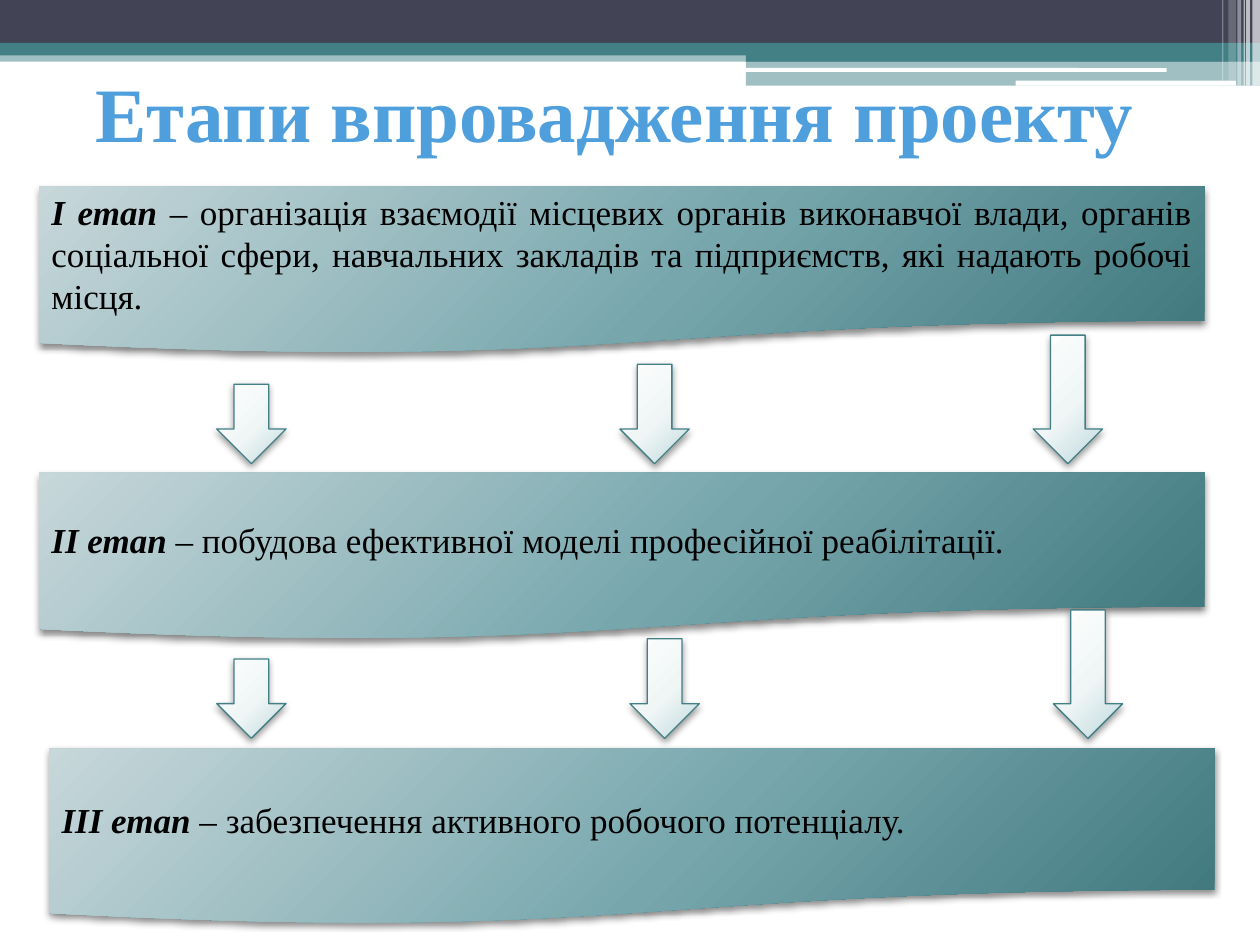
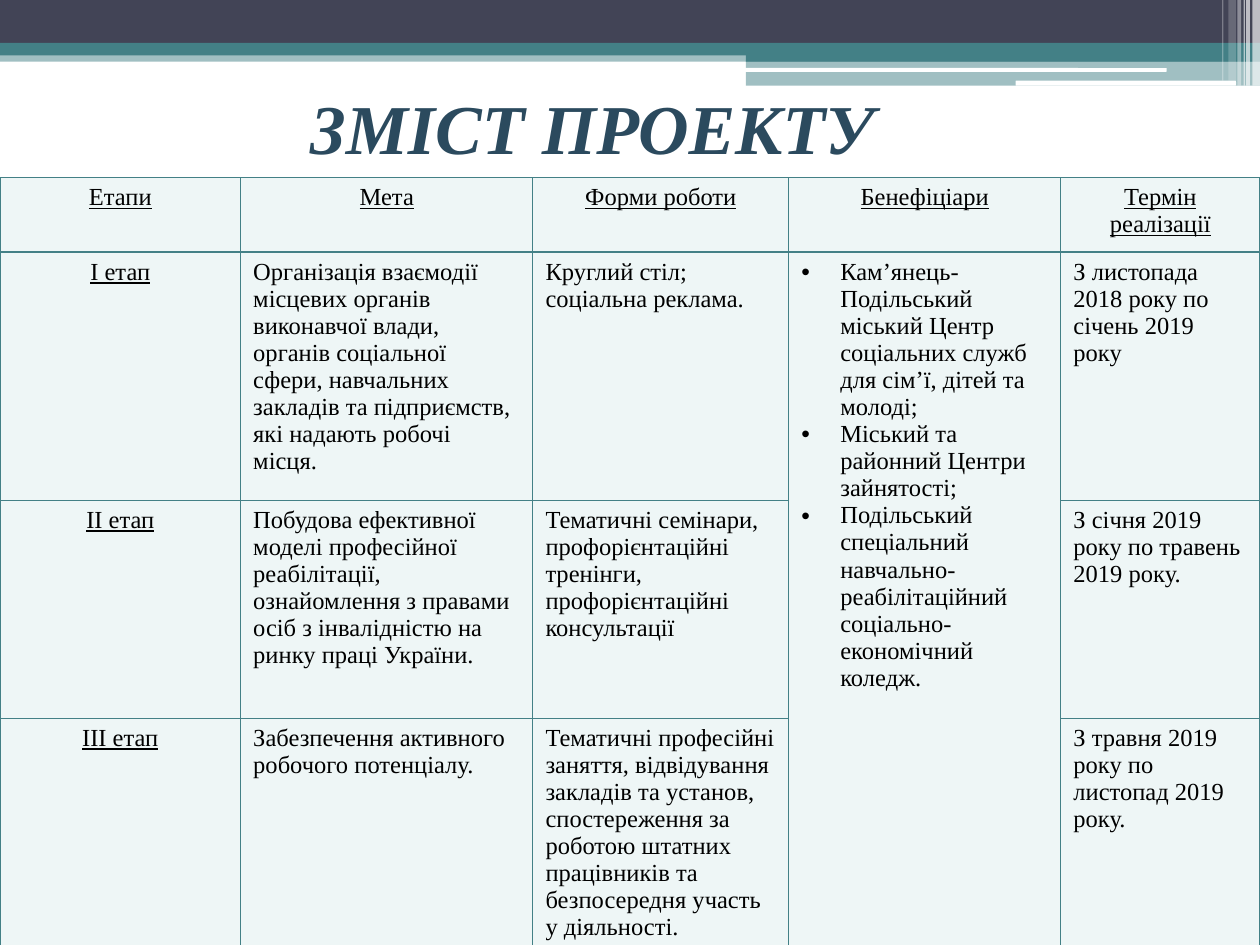
from dataclasses import dataclass

from lxml import etree
from pptx import Presentation
from pptx.dml.color import RGBColor
from pptx.enum.shapes import MSO_SHAPE
from pptx.enum.text import MSO_ANCHOR, MSO_AUTO_SIZE, PP_ALIGN
from pptx.oxml import parse_xml
from pptx.oxml.ns import qn
from pptx.util import Inches, Pt

RECT = MSO_SHAPE.RECTANGLE
ROUND = MSO_SHAPE.ROUNDED_RECTANGLE
PAGE = MSO_SHAPE.FLOWCHART_DOCUMENT
DOWN = MSO_SHAPE.DOWN_ARROW
CENTER, LEFT, JUSTIFY = PP_ALIGN.CENTER, PP_ALIGN.LEFT, PP_ALIGN.JUSTIFY
TOP, MIDDLE = MSO_ANCHOR.TOP, MSO_ANCHOR.MIDDLE
GROW = MSO_AUTO_SIZE.SHAPE_TO_FIT_TEXT

FONT = "Times New Roman"
BLACK = RGBColor(0x00, 0x00, 0x00)
WHITE = RGBColor(0xFF, 0xFF, 0xFF)
DARK = RGBColor(0x42, 0x44, 0x56)
TEAL = RGBColor(0x43, 0x80, 0x86)
NAVY = RGBColor(0x2B, 0x4A, 0x5E)
PALE = RGBColor(0xEE, 0xF6, 0xF6)

Stops = tuple[tuple[int, RGBColor], ...]
SEA: Stops = ((0, RGBColor(0xC7, 0xD7, 0xDA)), (55, RGBColor(0x77, 0xA7, 0xAD)),
              (100, RGBColor(0x3E, 0x77, 0x7D)))
MIST: Stops = ((0, RGBColor(0xFE, 0xFE, 0xFE)), (55, RGBColor(0xF0, 0xF6, 0xF6)),
               (100, RGBColor(0xBF, 0xD9, 0xDD)))
SKY: Stops = ((0, RGBColor(0x18, 0x4D, 0x70)), (78, RGBColor(0x4E, 0x9F, 0xDB)),
              (100, RGBColor(0xEF, 0xF5, 0xFB)))
GLOW = ('<a:path path="circle"><a:fillToRect l="-40000" t="-90000" '
        'r="140000" b="190000"/></a:path>')
FALL = '<a:lin ang="5400000" scaled="0"/>'
NS = 'xmlns:a="http://schemas.openxmlformats.org/drawingml/2006/main"'


@dataclass
class Box:
    left: float
    top: float
    width: float
    height: float

    def place(self) -> tuple:
        return tuple(Inches(n) for n in (self.left, self.top, self.width, self.height))


@dataclass
class Band:
    box: Box
    color: RGBColor
    alpha: int = 100
    kind: int = RECT


@dataclass
class Step:
    box: Box
    label: str
    text: str


BANDS = [
    Band(Box(0, 0.4, 10, 0.09), TEAL, 50),
    Band(Box(0, 0, 10, 0.34), DARK),
    Band(Box(0, 0.34, 10, 0.1), TEAL),
    Band(Box(5.92, 0.39, 4.08, 0.1), TEAL),
    Band(Box(5.92, 0.48, 4.08, 0.2), TEAL, 50),
    Band(Box(5.91, 0.54, 3.35, 0.03), WHITE, kind=ROUND),
    Band(Box(8.06, 0.64, 1.75, 0.04), WHITE, kind=ROUND),
] + [
    Band(Box(left, 0, width, height), WHITE, alpha)
    for left, width, height, alpha in (
        (9.94, 0.06, 0.68, 65), (9.89, 0.03, 0.68, 65), (9.87, 0.01, 0.68, 60),
        (9.82, 0.03, 0.68, 40), (9.75, 0.06, 0.64, 20), (9.7, 0.01, 0.64, 30))
]

STEPS = [
    Step(Box(0.31, 1.48, 9.25, 1.33), "І етап ",
         "організація взаємодії місцевих органів виконавчої влади, органів соціальної "
         "сфери, навчальних закладів та підприємств, які надають робочі місця."),
    Step(Box(0.31, 3.75, 9.25, 1.33), "ІI етап ",
         "побудова ефективної моделі професійної реабілітації."),
    Step(Box(0.39, 5.94, 9.25, 1.4), "ІІI етап ",
         "забезпечення активного робочого потенціалу."),
]
TIPS = {3.68: (1.72, 4.92, 8.2), 5.86: (1.72, 5, 8.36)}
DROPS = (0.63, 0.79, 1.02)

COLS = (1.91, 2.32, 2.03, 2.16, 1.58)
ROWS = (0.59, 1.97, 1.73, 1.97)
GROUP = 3
CELLS = [
    ["Етапи", "Мета", "Форми роботи", "Бенефіціари", "Термін реалізації"],
    ["I етап",
     "Організація взаємодії місцевих органів виконавчої влади, органів соціальної "
     "сфери, навчальних закладів та підприємств, які надають робочі місця.",
     "Круглий стіл;\nсоціальна реклама.",
     "Кам’янець-Подільський міський Центр соціальних служб для сім’ї, дітей та молоді;\n"
     "Міський та районний Центри зайнятості;\n"
     "Подільський спеціальний навчально-реабілітаційний соціально-економічний коледж.",
     "З листопада 2018 року по січень 2019 року"],
    ["II етап",
     "Побудова ефективної моделі професійної реабілітації, ознайомлення з правами "
     "осіб з інвалідністю на ринку праці України.",
     "Тематичні семінари, профорієнтаційні тренінги, профорієнтаційні\nконсультації",
     "", "З січня 2019 року по травень 2019 року."],
    ["IІI етап", "Забезпечення активного робочого потенціалу.",
     "Тематичні професійні заняття, відвідування закладів та установ, спостереження "
     "за роботою штатних працівників та безпосередня участь у діяльності.",
     "", "З травня 2019 року по листопад 2019 року."],
]


def blend(fill, owner, stops: Stops, way: str) -> None:
    fill.gradient()
    marks = "".join(f'<a:gs pos="{pos * 1000}"><a:srgbClr val="{color}"/></a:gs>'
                    for pos, color in stops)
    new = parse_xml(f'<a:gradFill {NS} rotWithShape="1"><a:gsLst>{marks}</a:gsLst>'
                    f'{way}</a:gradFill>')
    old = owner.find(qn("a:gradFill"))
    owner.replace(old, new)


def shade(shape, alpha: int, blur: float) -> None:
    shape.shadow.inherit = False
    shape._element.spPr.find(qn("a:effectLst")).append(parse_xml(
        f'<a:outerShdw {NS} blurRad="{Pt(blur)}" dist="{Pt(2)}" dir="5400000" '
        f'rotWithShape="0"><a:srgbClr val="{BLACK}"><a:alpha val="{alpha * 1000}"/>'
        '</a:srgbClr></a:outerShdw>'))


def style(run, size: int, color: RGBColor = BLACK, bold: bool = False,
          slant: bool = False, under: bool = False) -> None:
    font = run.font
    font.name, font.size = FONT, Pt(size)
    font.color.rgb = color
    font.bold, font.italic, font.underline = bold, slant, under


def draw_band(slide, band: Band) -> None:
    shape = slide.shapes.add_shape(band.kind, *band.box.place())
    shape.fill.solid()
    shape.fill.fore_color.rgb = band.color
    shape.line.fill.background()
    shape.shadow.inherit = False
    if band.alpha < 100:
        tint = shape._element.spPr.find(f"{qn('a:solidFill')}/{qn('a:srgbClr')}")
        etree.SubElement(tint, qn("a:alpha"), val=str(band.alpha * 1000))


def start(deck, title: str, box: Box, size: int, color: RGBColor,
          slant: bool, wrap: bool):
    slide = deck.slides.add_slide(deck.slide_layouts[5])
    for band in BANDS:
        draw_band(slide, band)
    head = slide.shapes.title
    head.left, head.top, head.width, head.height = box.place()
    frame = head.text_frame
    frame.text = title
    frame.word_wrap, frame.auto_size = wrap, GROW
    frame.vertical_anchor = TOP
    frame.paragraphs[0].alignment = CENTER
    style(frame.paragraphs[0].runs[0], size, color, True, slant)
    return slide


def draw_step(slide, step: Step) -> None:
    shape = slide.shapes.add_shape(PAGE, *step.box.place())
    blend(shape.fill, shape._element.spPr, SEA, GLOW)
    shape.line.fill.background()
    shade(shape, 45, 4)
    frame = shape.text_frame
    frame.word_wrap = True
    frame.vertical_anchor = MIDDLE
    para = frame.paragraphs[0]
    para.alignment = JUSTIFY
    for text, bold, slant in ((step.label, True, True), ("– ", False, True),
                              (step.text, False, False)):
        run = para.add_run()
        run.text = text
        style(run, 20, bold=bold, slant=slant)


def draw_arrow(slide, box: Box) -> None:
    shape = slide.shapes.add_shape(DOWN, *box.place())
    blend(shape.fill, shape._element.spPr, MIST, GLOW)
    shape.line.color.rgb = TEAL
    shape.line.width = Pt(0.75)
    shade(shape, 40, 4.1)


def frame_cell(cell) -> None:
    cell.fill.solid()
    cell.fill.fore_color.rgb = PALE
    props = cell._tc.get_or_add_tcPr()
    for i, side in enumerate("LRTB"):
        props.insert(i, parse_xml(
            f'<a:ln{side} {NS} w="{Pt(0.75)}"><a:solidFill><a:srgbClr val="{TEAL}"/>'
            f'</a:solidFill></a:ln{side}>'))


def add_dot(para) -> None:
    props = para._p.get_or_add_pPr()
    props.set("marL", str(Inches(0.31)))
    props.set("indent", str(-Inches(0.31)))
    etree.SubElement(props, qn("a:buFont"), typeface="Arial")
    etree.SubElement(props, qn("a:buChar"), char="•")


def fill_cell(cell, text: str, head: bool, dots: bool) -> None:
    frame_cell(cell)
    if not text:
        return
    cell.text_frame.text = text
    for para in cell.text_frame.paragraphs:
        para.alignment = CENTER if head else LEFT
        if dots:
            add_dot(para)
        for run in para.runs:
            style(run, 14, under=head)


def draw_table(slide) -> None:
    box = Box(0, 1.41, sum(COLS), sum(ROWS))
    table = slide.shapes.add_table(len(ROWS), len(COLS), *box.place()).table
    for col, width in zip(table.columns, COLS):
        col.width = Inches(width)
    for row, height in zip(table.rows, ROWS):
        row.height = Inches(height)
    table.cell(1, GROUP).merge(table.cell(len(ROWS) - 1, GROUP))
    for r, line in enumerate(CELLS):
        for c, text in enumerate(line):
            fill_cell(table.cell(r, c), text, r == 0 or c == 0, r > 0 and c == GROUP)


def main() -> None:
    deck = Presentation()
    deck.slide_width, deck.slide_height = Inches(10), Inches(7.5)

    plan = start(deck, "Етапи впровадження проекту", Box(0.39, 0.47, 8.98, 0.84),
                 44, NAVY, False, True)
    run = plan.shapes.title.text_frame.paragraphs[0].runs[0]
    blend(run.font.fill, run._r.get_or_add_rPr(), SKY, FALL)
    for step in STEPS:
        draw_step(plan, step)
    for tip, lefts in TIPS.items():
        for left, drop in zip(lefts, DROPS):
            draw_arrow(plan, Box(left, tip - drop, 0.55, drop))

    goals = start(deck, "ЗМІСТ ПРОЕКТУ", Box(2.34, 0.62, 4.72, 0.77),
                  40, NAVY, True, False)
    draw_table(goals)
    deck.save("out.pptx")


if __name__ == "__main__":
    main()
